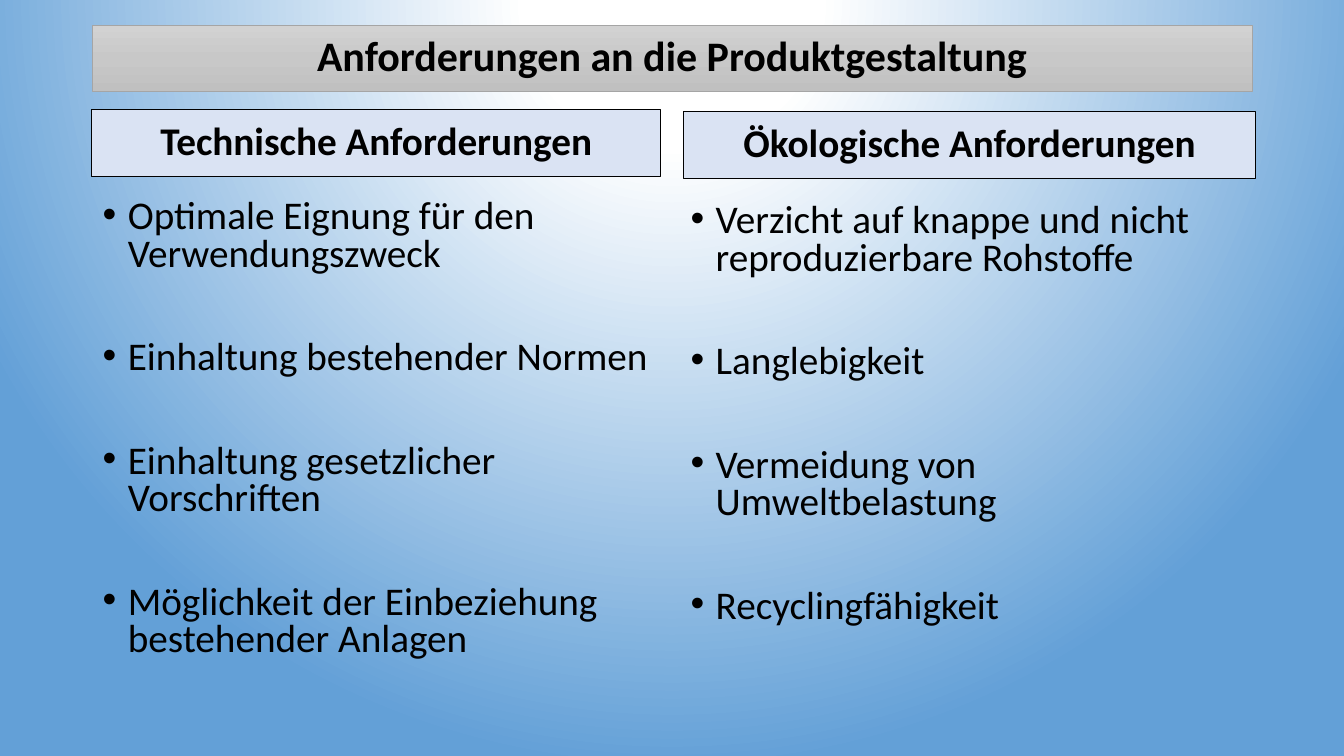
from lxml import etree
from pptx import Presentation, util as u
from pptx.dml.color import RGBColor
from pptx.enum import shapes, text
from pptx.oxml.ns import qn

COLORS = {"ink": "000000", "panel": "DAE3F3", "white": "FFFFFF", "sky": "63A0D7",
          "gray_light": "D2D2D2", "gray_mid": "C8C8C8", "gray_dark": "C0C0C0",
          "gray_line": "A5A5A5"}


class Deck:
    """Style and current slide; boxes are given in percent of the slide's size."""

    font = "Calibri"

    def __init__(self, prs):
        self.prs = prs
        self.s = prs.slides.add_slide(prs.slide_layouts[6])

    def color(self, name):
        return RGBColor.from_string(COLORS[name])

    def box(self, x, y, w, h):
        pw, ph = self.prs.slide_width / 100, self.prs.slide_height / 100
        return [u.Emu(round(v)) for v in (x * pw, y * ph, w * pw, h * ph)]

    def gradient(self, fill, element, stops, circle=None):
        """Fill with (position, colour, opacity) stops, downward or as a circle."""
        fill.gradient()
        grad = next(element.iter(qn("a:gradFill")))
        for child in list(grad):
            grad.remove(child)
        gs_list = etree.SubElement(grad, qn("a:gsLst"))
        for pos, name, opacity in stops:
            gs = etree.SubElement(gs_list, qn("a:gs"), pos=str(pos * 1000))
            clr = etree.SubElement(gs, qn("a:srgbClr"), val=COLORS[name])
            if opacity < 100:
                etree.SubElement(clr, qn("a:alpha"), val=str(opacity * 1000))
        if circle:
            shade = etree.SubElement(grad, qn("a:path"), {"path": "circle"})
            etree.SubElement(shade, qn("a:fillToRect"),
                             {side: str(v * 1000) for side, v in zip("ltrb", circle)})
        else:
            etree.SubElement(grad, qn("a:lin"), ang="5400000", scaled="0")

    def add_words(self, p, words, size, bold=False, **layout):
        for name, value in layout.items():
            setattr(p, name, value)
        r = p.add_run()
        r.text = words
        for name, value in {"name": self.font, "size": u.Pt(size), "bold": bold}.items():
            setattr(r.font, name, value)
        r.font.color.rgb = self.color("ink")

    def banner(self, words, box, size, line, width, fill=None, stops=None):
        sp = self.s.shapes.add_shape(shapes.MSO_SHAPE.RECTANGLE, *self.box(*box))
        sp.shadow.inherit = False
        if stops:
            self.gradient(sp.fill, sp.element, stops)
        else:
            sp.fill.solid()
            sp.fill.fore_color.rgb = self.color(fill)
        sp.line.color.rgb = self.color(line)
        sp.line.width = u.Pt(width)
        tf = sp.text_frame
        tf.word_wrap = True
        tf.vertical_anchor = text.MSO_ANCHOR.MIDDLE
        self.add_words(tf.paragraphs[0], words, size, bold=True,
                       alignment=text.PP_ALIGN.CENTER, line_spacing=0.9)

    def bullets(self, items, box, size=28, first_gap=10, gap=47):
        tf = self.s.shapes.add_textbox(*self.box(*box)).text_frame
        tf.word_wrap = True
        for i, item in enumerate(items):
            p = tf.add_paragraph() if i else tf.paragraphs[0]
            self.add_words(p, item, size, line_spacing=0.8,
                           space_before=u.Pt(gap if i else first_gap))
            pPr = p._p.get_or_add_pPr()
            pPr.set("marL", str(u.Inches(0.25)))
            pPr.set("indent", str(u.Inches(-0.25)))
            etree.SubElement(pPr, qn("a:buFont"), typeface="Arial")
            etree.SubElement(pPr, qn("a:buChar"), char="•")


def main():
    prs = Presentation()
    prs.slide_width, prs.slide_height = u.Inches(13.33), u.Inches(7.5)
    deck = Deck(prs)

    # Background glow from above the slide
    deck.gradient(deck.s.background.fill, deck.s.element,
                  [(0, "white", 100), (19, "white", 100), (100, "sky", 91)],
                  circle=(50, -80, 50, 180))

    # Title
    deck.banner("Anforderungen an die Produktgestaltung", (6.9, 3.33, 86.27, 8.8),
                30, "gray_line", 0.5,
                stops=[(0, "gray_light", 100), (50, "gray_mid", 100),
                       (100, "gray_dark", 100)])

    # Two columns: heading and its list
    columns = [
        ("Technische Anforderungen", (6.83, 14.53, 42.31, 8.8), 0.5,
         (6.9, 25.73, 42.31, 64.53),
         ["Optimale Eignung für den Verwendungszweck",
          "Einhaltung bestehender Normen",
          "Einhaltung gesetzlicher Vorschriften",
          "Möglichkeit der Einbeziehung bestehender Anlagen"]),
        ("Ökologische Anforderungen", (50.86, 14.8, 42.54, 8.8), 0.75,
         (50.64, 26.27, 42.54, 64),
         ["Verzicht auf knappe und nicht reproduzierbare Rohstoffe",
          "Langlebigkeit",
          "Vermeidung von Umweltbelastung",
          "Recyclingfähigkeit"]),
    ]
    for heading, head_box, width, list_box, items in columns:
        deck.banner(heading, head_box, 28, "ink", width, fill="panel")
        deck.bullets(items, list_box)

    prs.save("out.pptx")


if __name__ == "__main__":
    main()
